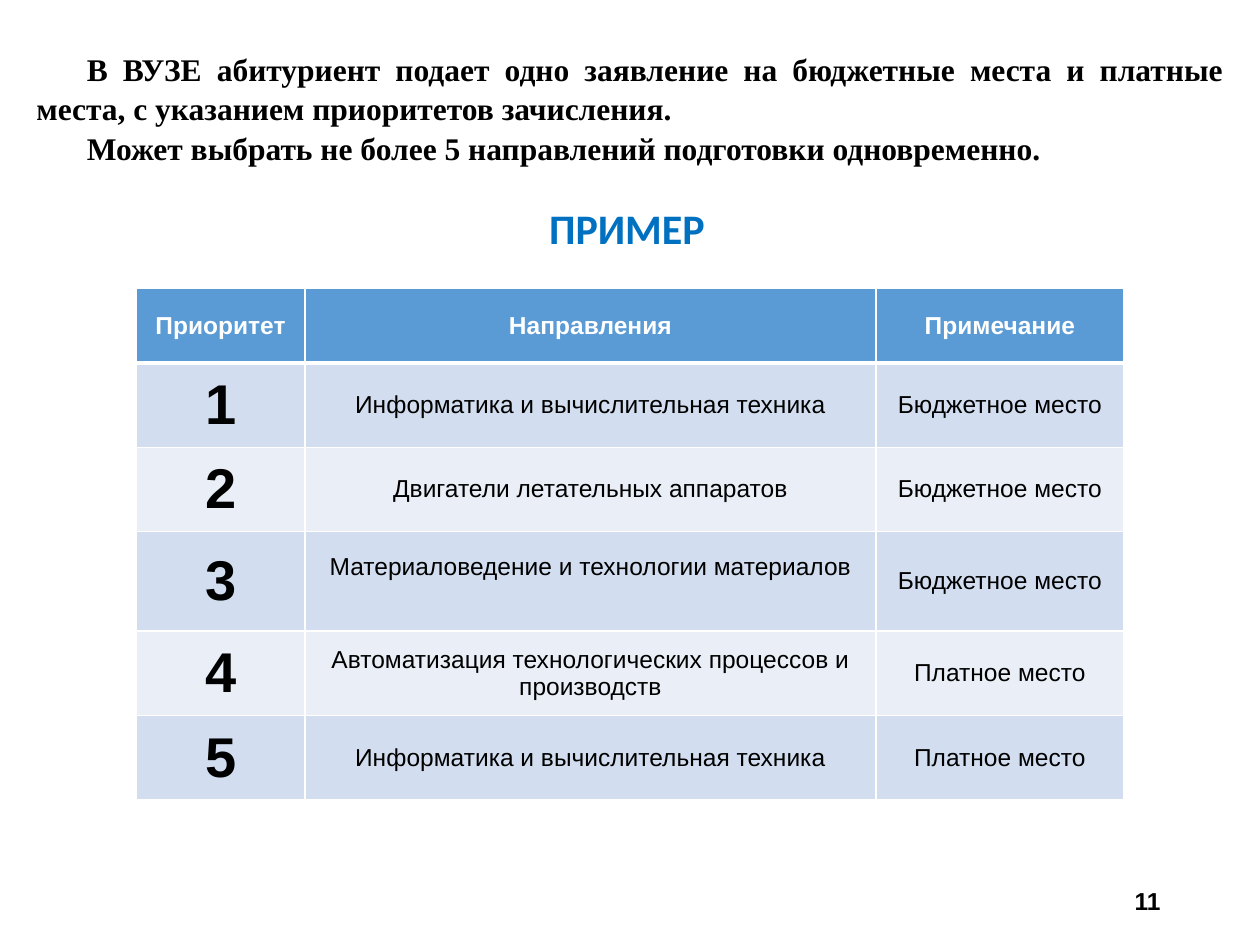
from dataclasses import dataclass

from lxml import etree
from pptx import Presentation
from pptx.dml.color import RGBColor
from pptx.enum.text import MSO_ANCHOR, MSO_AUTO_SIZE, PP_ALIGN
from pptx.oxml.ns import qn
from pptx.util import Pt

LEFT, CENTER, RIGHT, JUSTIFY = PP_ALIGN.LEFT, PP_ALIGN.CENTER, PP_ALIGN.RIGHT, PP_ALIGN.JUSTIFY
TOP, MIDDLE = MSO_ANCHOR.TOP, MSO_ANCHOR.MIDDLE
NO_AUTO_SIZE = MSO_AUTO_SIZE.NONE
TITLE_ONLY = 5


@dataclass(frozen=True)
class Theme:
    black: str = "000000"
    white: str = "FFFFFF"
    title: str = "0070C0"
    header: str = "5B9BD5"
    bands: tuple = ("D2DEEF", "EAEFF7")
    intro_font: str = "Times New Roman"
    title_font: str = "Calibri"
    table_font: str = "Arial"
    intro_size: int = 18
    title_size: int = 24
    table_size: int = 14
    priority_size: int = 32


THEME = Theme()

INTRO = [
    "В ВУЗЕ абитуриент подает одно заявление на бюджетные места и платные места, "
    "с указанием приоритетов зачисления.",
    "Может выбрать не более 5 направлений подготовки одновременно.",
]
TITLE = "ПРИМЕР"
PAGE_NUMBER = "11"
HEADERS = ("Приоритет", "Направления", "Примечание")
CHOICES = [
    ("Информатика и вычислительная техника", "Бюджетное место"),
    ("Двигатели летательных аппаратов", "Бюджетное место"),
    ("Материаловедение и технологии материалов", "Бюджетное место"),
    ("Автоматизация технологических процессов и производств", "Платное место"),
    ("Информатика и вычислительная техника", "Платное место"),
]

PAGE_SIZE = (720, 540)
INTRO_BOX = (13.7, 23.8, 692.6, 72.7)
TITLE_BOX = (49, 112.3, 618.5, 36)
NUMBER_BOX = (508.3, 500.4, 162, 28.8)
TABLE_PLACE = (77.8, 164.9)
COLUMN_WIDTHS = (96.5, 326.2, 141.8)
ROW_HEIGHTS = (42.5, 48.2, 48.2, 56.9, 48.2, 48.2)
RAISED_CELL = (3, 1)
RAISED_MARGIN = 19.6


def points(values):
    return [Pt(value) for value in values]


def write(frame, lines, *, font, size, color=THEME.black, bold=True,
          align=LEFT, anchor=TOP, indent=0, spacing=1.0):
    frame.word_wrap = True
    frame.vertical_anchor = anchor
    for number, line in enumerate(lines):
        para = frame.add_paragraph() if number else frame.paragraphs[0]
        para.alignment = align
        para.line_spacing = spacing
        if indent:
            para._p.get_or_add_pPr().set("indent", str(Pt(indent)))
        span = para.add_run()
        span.text = line
        span.font.name = font
        span.font.size = Pt(size)
        span.font.bold = bold
        span.font.color.rgb = RGBColor.from_string(color)


def set_borders(cell, widths):
    """Draw white cell borders; widths are left, right, top and bottom."""
    properties = cell._tc.get_or_add_tcPr()
    for position, (side, width) in enumerate(zip("LRTB", widths)):
        line = etree.Element(qn(f"a:ln{side}"), w=str(Pt(width)))
        fill = etree.SubElement(line, qn("a:solidFill"))
        etree.SubElement(fill, qn("a:srgbClr"), val=THEME.white)
        properties.insert(position, line)


def add_choice_table(slide):
    rows = [HEADERS] + [(str(number), *choice) for number, choice in enumerate(CHOICES, 1)]
    size = (sum(COLUMN_WIDTHS), sum(ROW_HEIGHTS))
    table = slide.shapes.add_table(
        len(rows), len(HEADERS), *points(TABLE_PLACE + size)).table
    for column, width in zip(table.columns, COLUMN_WIDTHS):
        column.width = Pt(width)
    for row, height in zip(table.rows, ROW_HEIGHTS):
        row.height = Pt(height)

    for r, row in enumerate(rows):
        is_header = r == 0
        fill = THEME.header if is_header else THEME.bands[(r - 1) % 2]
        for c, text in enumerate(row):
            is_priority = c == 0 and not is_header
            cell = table.cell(r, c)
            cell.fill.solid()
            cell.fill.fore_color.rgb = RGBColor.from_string(fill)
            set_borders(cell, (1, 1, 3 if r == 1 else 1, 3 if is_header else 1))
            write(cell.text_frame, [text], font=THEME.table_font,
                  size=THEME.priority_size if is_priority else THEME.table_size,
                  color=THEME.white if is_header else THEME.black,
                  bold=is_header or is_priority, align=CENTER)
            cell.vertical_anchor = MIDDLE
    table.cell(*RAISED_CELL).margin_bottom = Pt(RAISED_MARGIN)


def main():
    deck = Presentation()
    deck.slide_width, deck.slide_height = points(PAGE_SIZE)
    slide = deck.slides.add_slide(deck.slide_layouts[TITLE_ONLY])

    intro = slide.shapes.add_textbox(*points(INTRO_BOX))
    write(intro.text_frame, INTRO, font=THEME.intro_font, size=THEME.intro_size,
          align=JUSTIFY, indent=28.8, spacing=1.05)

    title = slide.shapes.title
    title.left, title.top, title.width, title.height = points(TITLE_BOX)
    title.text_frame.auto_size = NO_AUTO_SIZE
    write(title.text_frame, [TITLE], font=THEME.title_font, size=THEME.title_size,
          color=THEME.title, align=CENTER, anchor=MIDDLE)

    add_choice_table(slide)

    number = slide.shapes.add_textbox(*points(NUMBER_BOX))
    write(number.text_frame, [PAGE_NUMBER], font=THEME.table_font,
          size=THEME.table_size, align=RIGHT, anchor=MIDDLE)

    deck.save("out.pptx")


if __name__ == "__main__":
    main()
